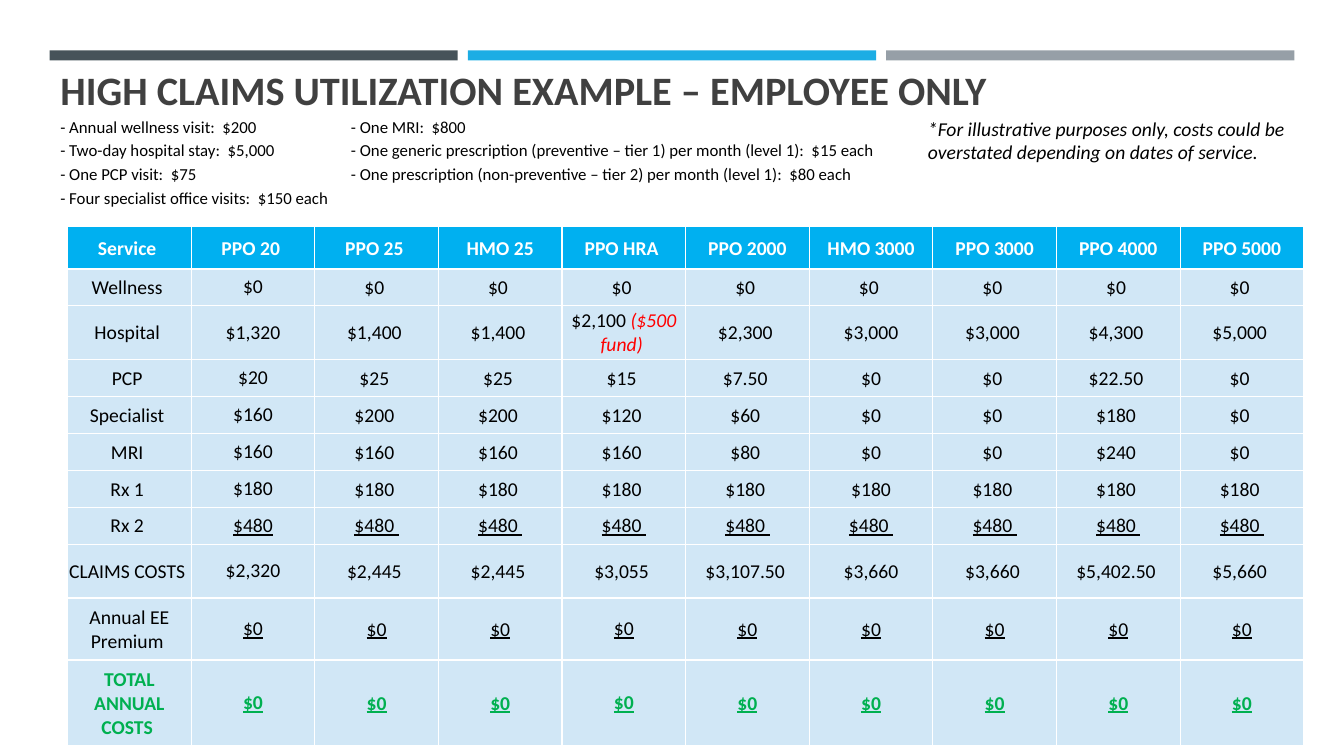
import dataclasses

import lxml.etree
import pptx
import pptx.dml.color
import pptx.enum.shapes
import pptx.enum.text
import pptx.oxml.ns
import pptx.util

GRID_COLUMNS, GRID_ROWS = 160, 90
ALIGN = pptx.enum.text.PP_ALIGN
ANCHOR = pptx.enum.text.MSO_ANCHOR

BARS = ["465359", "1CADE4", "969FA7"]
TITLE = "HIGH CLAIMS UTILIZATION EXAMPLE – EMPLOYEE ONLY"
DISCLAIMER = "*For illustrative purposes only, costs could be overstated depending on dates of service."
ASSUMPTIONS = [
    "- Annual wellness visit:  $200\t- One MRI:  $800",
    "- Two-day hospital stay:  $5,000\t- One generic prescription (preventive – tier 1) per month (level 1):  $15 each",
    "- One PCP visit:  $75\t- One prescription (non-preventive – tier 2) per month (level 1):  $80 each",
    "- Four specialist office visits:  $150 each",
]
COSTS = [
    "Service |PPO 20 |PPO 25 |HMO 25|PPO HRA |PPO 2000|HMO 3000|PPO 3000|PPO 4000|PPO 5000",
    "Wellness |$0|$0 |$0 |$0 |$0 |$0 |$0 |$0 |$0 ",
    "Hospital |$1,320|$1,400 |$1,400 |$2,100 ($500 fund) |$2,300 |$3,000|$3,000 |$4,300 |$5,000 ",
    "PCP |$20|$25 |$25 |$15 |$7.50 |$0|$0 |$22.50 |$0 ",
    "Specialist |$160|$200 |$200 |$120 |$60 |$0|$0 |$180 |$0 ",
    "MRI |$160|$160 |$160 |$160 |$80 |$0|$0 |$240 |$0 ",
    "Rx 1 |$180|$180 |$180 |$180 |$180 |$180|$180 |$180 |$180 ",
    "Rx 2 |$480|$480 |$480 |$480 |$480 |$480 |$480 |$480 |$480 ",
    "CLAIMS COSTS |$2,320|$2,445 |$2,445 |$3,055 |$3,107.50 |$3,660|$3,660 |$5,402.50 |$5,660 ",
    "Annual EE Premium " + "|$0" * 9,
    "TOTAL ANNUAL COSTS " + "|$0" * 9,
]
ROW_HEIGHTS = [5, 4.4, 6.4, 4.4, 4.4, 4.4, 4.4, 4.4, 6.4, 7.4, 10.2]
COLUMN_WIDTH = 14.72
HEADER_ROW, PRESCRIPTION_ROW, PREMIUM_ROW, TOTAL_ROW = 0, 7, 9, 10
PLAIN_COLUMN, FUND_COLUMN = 1, 4


def colour(value):
    """Turn a hex string into a colour."""
    return pptx.dml.color.RGBColor.from_string(value)


def assign(target, values):
    """Set every attribute listed in a dict."""
    for name, value in values.items():
        setattr(target, name, value)


@dataclasses.dataclass
class Painter:
    """Draw styled elements on the current slide."""

    deck: object
    page: object
    font: str = "Calibri"
    ink: str = "000000"

    def across(self, columns):
        """Convert grid columns to a length."""
        return int(self.deck.slide_width * columns / GRID_COLUMNS)

    def down(self, rows):
        """Convert grid rows to a length."""
        return int(self.deck.slide_height * rows / GRID_ROWS)

    def frame(self, left, top, width, height):
        """Convert a grid rectangle to lengths."""
        return self.across(left), self.down(top), self.across(width), self.down(height)

    def span(self, para, text, size, ink=None, **look):
        """Add a formatted run to a paragraph."""
        span = para.add_run()
        span.text = text
        assign(span.font, {"name": self.font, "size": pptx.util.Pt(size), **look})
        span.font.color.rgb = colour(ink or self.ink)

    def bar(self, fill, *place):
        """Add a flat rectangle."""
        box = self.page.shapes.add_shape(
            pptx.enum.shapes.MSO_SHAPE.RECTANGLE, *self.frame(*place))
        box.shadow.inherit = False
        box.fill.solid()
        box.fill.fore_color.rgb = colour(fill)
        box.line.fill.background()

    def title(self, text, *place):
        """Place and fill the title placeholder."""
        box = self.page.shapes.title
        assign(box, dict(zip(("left", "top", "width", "height"), self.frame(*place))))
        assign(box.text_frame, {"vertical_anchor": ANCHOR.BOTTOM, "word_wrap": True,
                                "auto_size": pptx.enum.text.MSO_AUTO_SIZE.NONE})
        para = box.text_frame.paragraphs[0]
        para.alignment = ALIGN.LEFT
        self.span(para, text, 28.8, "404040", bold=True)

    def text(self, lines, size, *place, gap=0, tab=None, **look):
        """Add a wrapped text box with one paragraph per line."""
        box = self.page.shapes.add_textbox(*self.frame(*place))
        box.text_frame.word_wrap = True
        for index, line in enumerate(lines):
            para = box.text_frame.add_paragraph() if index else box.text_frame.paragraphs[0]
            para.space_before = pptx.util.Pt(gap)
            if tab:
                name = pptx.oxml.ns.qn
                stops = lxml.etree.SubElement(para._p.get_or_add_pPr(), name("a:tabLst"))
                lxml.etree.SubElement(stops, name("a:tab"), pos=str(self.across(tab)), algn="l")
            self.span(para, line, size, **look)

    def borders(self, cell, widths):
        """Draw white cell borders of the given widths in points."""
        name = pptx.oxml.ns.qn
        for side, width in widths.items():
            line = lxml.etree.SubElement(
                cell._tc.get_or_add_tcPr(), name("a:ln" + side), w=str(pptx.util.Pt(width)))
            fill = lxml.etree.SubElement(line, name("a:solidFill"))
            lxml.etree.SubElement(fill, name("a:srgbClr"), val="FFFFFF")

    def cell(self, cell, text, row, column):
        """Format one cost cell by its row and column."""
        header, total = row == HEADER_ROW, row == TOTAL_ROW
        roomy = column == PLAIN_COLUMN and not header or (
            column == FUND_COLUMN and row >= PREMIUM_ROW)
        side, top, bottom = (1.2, 0.6, 0.6) if roomy else (0.12, 0.12, 0)
        assign(cell, {"vertical_anchor": ANCHOR.MIDDLE,
                      "margin_left": self.across(side), "margin_right": self.across(side),
                      "margin_top": self.down(top), "margin_bottom": self.down(bottom)})
        self.borders(cell, {"L": 1, "R": 1, "T": 1.5 if row == 1 else 1,
                            "B": 1.5 if header else 1})
        cell.fill.solid()
        cell.fill.fore_color.rgb = colour("00B0F0" if header else "D1E7F6")
        para = cell.text_frame.paragraphs[0]
        para.alignment = ALIGN.CENTER
        amount, bracket, fund = text.partition("(")
        ink = "FFFFFF" if header else "00B050" if total else self.ink
        underlined = column > 0 and row in (PRESCRIPTION_ROW, PREMIUM_ROW, TOTAL_ROW)
        self.span(para, amount, 14, ink, bold=header or total, underline=underlined)
        if fund:
            self.span(para, bracket + fund, 14, "FF0000", italic=True)

    def table(self, lines, heights, column_width, left, top):
        """Add the cost table."""
        cells = [line.split("|") for line in lines]
        count = len(cells[0])
        table = self.page.shapes.add_table(len(cells), count, *self.frame(
            left, top, column_width * count, sum(heights))).table
        assign(table, {"first_row": False, "horz_banding": False})
        for column in table.columns:
            column.width = self.across(column_width)
        for row, values in enumerate(cells):
            table.rows[row].height = self.down(heights[row])
            for column, value in enumerate(values):
                self.cell(table.cell(row, column), value, row, column)


def main():
    """Build and save the claims slide."""
    deck = pptx.Presentation()
    assign(deck, {"slide_width": pptx.util.Inches(13.33), "slide_height": pptx.util.Inches(7.5)})
    painter = Painter(deck, deck.slides.add_slide(deck.slide_layouts[5]))
    for index, fill in enumerate(BARS):
        painter.bar(fill, 5.9 + 49.8 * index, 6, 48.6, 1.2)
    painter.title(TITLE, 6, 6.4, 114, 7.7)
    painter.text([DISCLAIMER], 14, 109.3, 13.3, 46, 6.8, italic=True)
    painter.text(ASSUMPTIONS, 12, 6, 13.3, 119, 13, gap=2.4, tab=34.6)
    painter.table(COSTS, ROW_HEIGHTS, COLUMN_WIDTH, 8.05, 27)
    deck.save("out.pptx")


if __name__ == "__main__":
    main()
